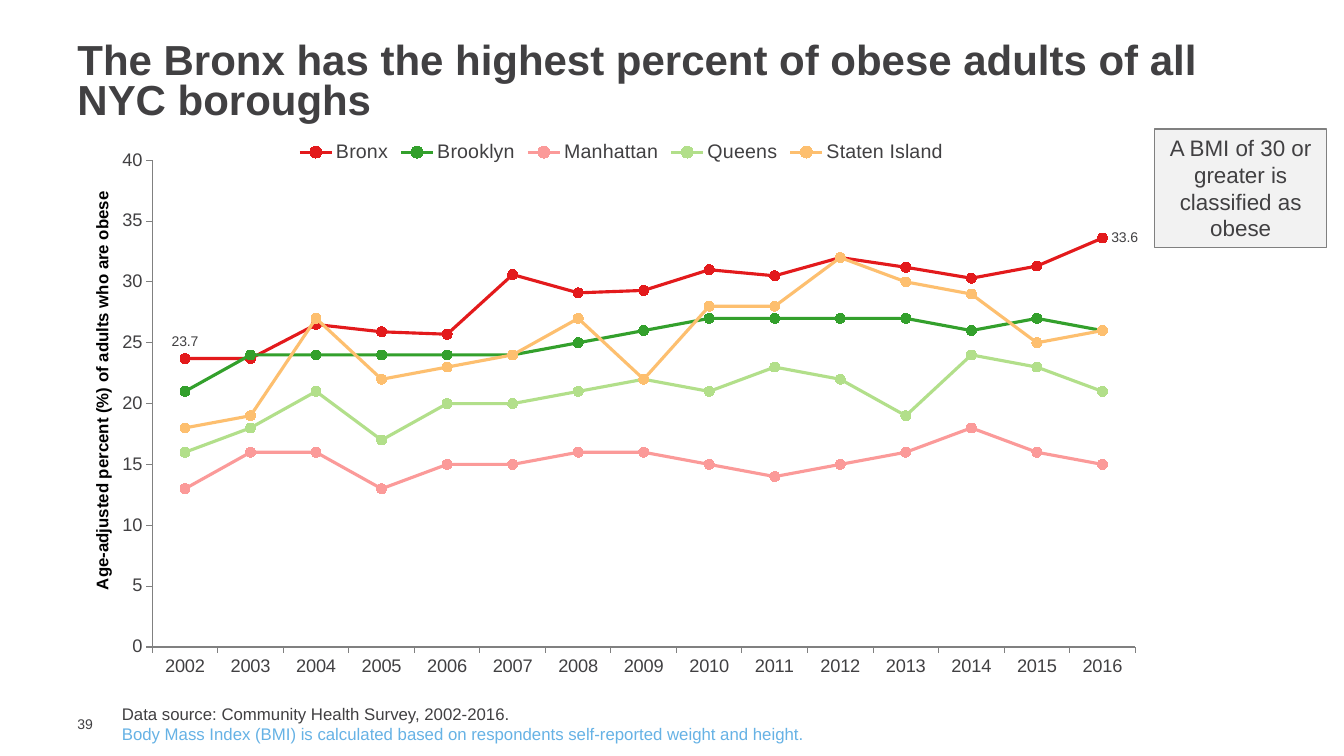
import dataclasses
import pptx
import pptx.chart.data
import pptx.dml.color
import pptx.enum.chart
import pptx.enum.shapes
import pptx.enum.text
import pptx.oxml
import pptx.util

Inches, Pt = pptx.util.Inches, pptx.util.Pt
Anchor, Align = pptx.enum.text.MSO_ANCHOR, pptx.enum.text.PP_ALIGN
FONT, INK, GRAY = "Arial", "414042", "808080"
CHART_WIDTH, CHART_HEIGHT = 10.57, 5.65


@dataclasses.dataclass
class Block:
    at: tuple[float, float, float, float]
    lines: list[tuple[str, str]]  # wording and colour of each paragraph
    size: float
    bold: bool = False
    anchor: Anchor = Anchor.TOP
    align: Align = Align.LEFT
    spacing: float = 1.0
    insets: tuple[float, float, float, float] = (0.1, 0.05, 0.1, 0.05)
    fill: str = ""


@dataclasses.dataclass
class Borough:
    name: str
    color: str
    percents: list[float]


BLOCKS = [
    Block((0.67, 7.1, 0.43, 0.17), [("39", INK)], 10, anchor=Anchor.MIDDLE, insets=(0.1, 0, 0, 0)),
    Block((0.67, 0.37, 12, 0.91),
          [("The Bronx has the highest percent of obese adults of all NYC boroughs", INK)],
          30, bold=True, anchor=Anchor.MIDDLE, spacing=0.8),
    Block((1.11, 6.93, 9.71, 0.5),
          [("Data source: Community Health Survey, 2002-2016.", INK),
           ("Body Mass Index (BMI) is calculated based on respondents self-reported weight and height.", "66B2E5")],
          12),
    Block((11.45, 1.28, 1.71, 1.18), [("A BMI of 30 or greater is classified as obese", INK)],
          16, align=Align.CENTER, fill="F2F2F2"),
]

YEARS = [str(year) for year in range(2002, 2017)]
BOROUGHS = [
    Borough("Bronx", "E31A1C",
            [23.7, 23.7, 26.5, 25.9, 25.7, 30.6, 29.1, 29.3, 31, 30.5, 32, 31.2, 30.3, 31.3, 33.6]),
    Borough("Brooklyn", "33A02C", [21, 24, 24, 24, 24, 24, 25, 26, 27, 27, 27, 27, 26, 27, 26]),
    Borough("Manhattan", "FB9A99", [13, 16, 16, 13, 15, 15, 16, 16, 15, 14, 15, 16, 18, 16, 15]),
    Borough("Queens", "B2DF8A", [16, 18, 21, 17, 20, 20, 21, 22, 21, 23, 22, 19, 24, 23, 21]),
    Borough("Staten Island", "FDBF6F", [18, 19, 27, 22, 23, 24, 27, 22, 28, 28, 32, 30, 29, 25, 26]),
]


def rgb(color: str) -> pptx.dml.color.RGBColor:
    return pptx.dml.color.RGBColor.from_string(color)


def apply(target: object, values: dict) -> None:
    for name, value in values.items():
        setattr(target, name, value)


def style_font(font, size: float, color: str = INK, bold: bool = False) -> None:
    apply(font, {"name": FONT, "size": Pt(size), "bold": bold})
    font.color.rgb = rgb(color)


def draw_block(page, block: Block) -> None:
    place = [Inches(length) for length in block.at]
    if block.fill:
        box = page.shapes.add_shape(pptx.enum.shapes.MSO_SHAPE.RECTANGLE, *place)
        box.shadow.inherit = False
        box.fill.solid()
        box.fill.fore_color.rgb = rgb(block.fill)
        box.line.color.rgb = rgb(GRAY)
        box.line.width = Pt(0.75)
    else:
        box = page.shapes.add_textbox(*place)
    frame = box.text_frame
    left, top, right, bottom = [Inches(length) for length in block.insets]
    apply(frame, {"word_wrap": True, "vertical_anchor": block.anchor, "margin_left": left,
                  "margin_top": top, "margin_right": right, "margin_bottom": bottom})
    for index, (wording, color) in enumerate(block.lines):
        para = frame.add_paragraph() if index else frame.paragraphs[0]
        apply(para, {"alignment": block.align, "line_spacing": block.spacing})
        span = para.add_run()
        span.text = wording
        style_font(span.font, block.size, color, block.bold)


def set_layout(element, edges: dict[str, float], inner: bool = False) -> None:
    """Place a chart part, given in inches from the corner of the chart."""
    namespace = "http://schemas.openxmlformats.org/drawingml/2006/chart"
    full = {"x": CHART_WIDTH, "y": CHART_HEIGHT, "w": CHART_WIDTH, "h": CHART_HEIGHT}
    target = '<c:layoutTarget val="inner"/>' if inner else ""
    modes = "".join(f'<c:{edge}Mode val="edge"/>' for edge in "xy")
    sizes = "".join(f'<c:{edge} val="{length / full[edge]}"/>' for edge, length in edges.items())
    for old in element.findall(f"{{{namespace}}}layout"):
        element.remove(old)
    layout = pptx.oxml.parse_xml(
        f'<c:layout xmlns:c="{namespace}"><c:manualLayout>{target}{modes}{sizes}</c:manualLayout></c:layout>')
    # The layout follows the title text or legend position, and opens the plot area
    element.insert(0 if inner else 1, layout)


def draw_chart(page) -> None:
    kinds = pptx.enum.chart
    data = pptx.chart.data.CategoryChartData(number_format="General")
    data.categories = YEARS
    for borough in BOROUGHS:
        data.add_series(borough.name, borough.percents)
    chart = page.shapes.add_chart(kinds.XL_CHART_TYPE.LINE_MARKERS, Inches(0.88), Inches(1.28),
                                  Inches(CHART_WIDTH), Inches(CHART_HEIGHT), data).chart
    style_font(chart.font, 18)
    apply(chart, {"has_title": False, "has_legend": True})
    chart.plots[0].vary_by_categories = False
    set_layout(chart.plots[0]._element.getparent(),
               {"x": 0.63, "y": 0.31, "w": 9.75, "h": 4.83}, inner=True)

    # Legend
    apply(chart.legend, {"position": kinds.XL_LEGEND_POSITION.TOP, "include_in_layout": False})
    style_font(chart.legend.font, 14)
    set_layout(chart.legend._element, {"x": 2.03, "y": 0.06, "w": 6.51, "h": 0.34})

    # Axes
    for axis in (chart.category_axis, chart.value_axis):
        apply(axis, {"has_major_gridlines": False, "major_tick_mark": kinds.XL_TICK_MARK.OUTSIDE,
                     "minor_tick_mark": kinds.XL_TICK_MARK.NONE})
        axis.format.line.color.rgb = rgb(GRAY)
        axis.format.line.width = Pt(0.75)
        style_font(axis.tick_labels.font, 13)
    scale = chart.value_axis
    apply(scale, {"minimum_scale": 0, "maximum_scale": 40, "major_unit": 5})
    apply(scale.tick_labels, {"number_format": "0", "number_format_is_linked": False})
    frame = scale.axis_title.text_frame
    frame._txBody.bodyPr.set("rot", "-5400000")
    span = frame.paragraphs[0].add_run()
    span.text = "Age-adjusted percent (%) of adults who are obese"
    style_font(span.font, 12, "000000", bold=True)
    set_layout(scale.axis_title._element, {"x": 0, "y": 0.59})

    # Borough lines
    for series, borough in zip(chart.plots[0].series, BOROUGHS):
        series.smooth = False
        series.format.line.color.rgb = rgb(borough.color)
        series.format.line.width = Pt(2.25)
        marker = series.marker
        apply(marker, {"style": kinds.XL_MARKER_STYLE.CIRCLE, "size": 7})
        marker.format.fill.solid()
        marker.format.fill.fore_color.rgb = rgb(borough.color)
        marker.format.line.color.rgb = rgb(borough.color)

    # First and last values of the Bronx
    bronx = chart.plots[0].series[0]
    bronx.data_labels.show_value = False
    places = kinds.XL_LABEL_POSITION
    for index, place in ((0, places.ABOVE), (len(YEARS) - 1, places.RIGHT)):
        label = bronx.points[index].data_label
        style_font(label.font, 10)
        label.position = place


def main() -> None:
    deck = pptx.Presentation()
    apply(deck, {"slide_width": Inches(13.33), "slide_height": Inches(7.5)})
    page = deck.slides.add_slide(deck.slide_layouts[6])
    for block in BLOCKS:
        draw_block(page, block)
    draw_chart(page)
    deck.save("out.pptx")


if __name__ == "__main__":
    main()
